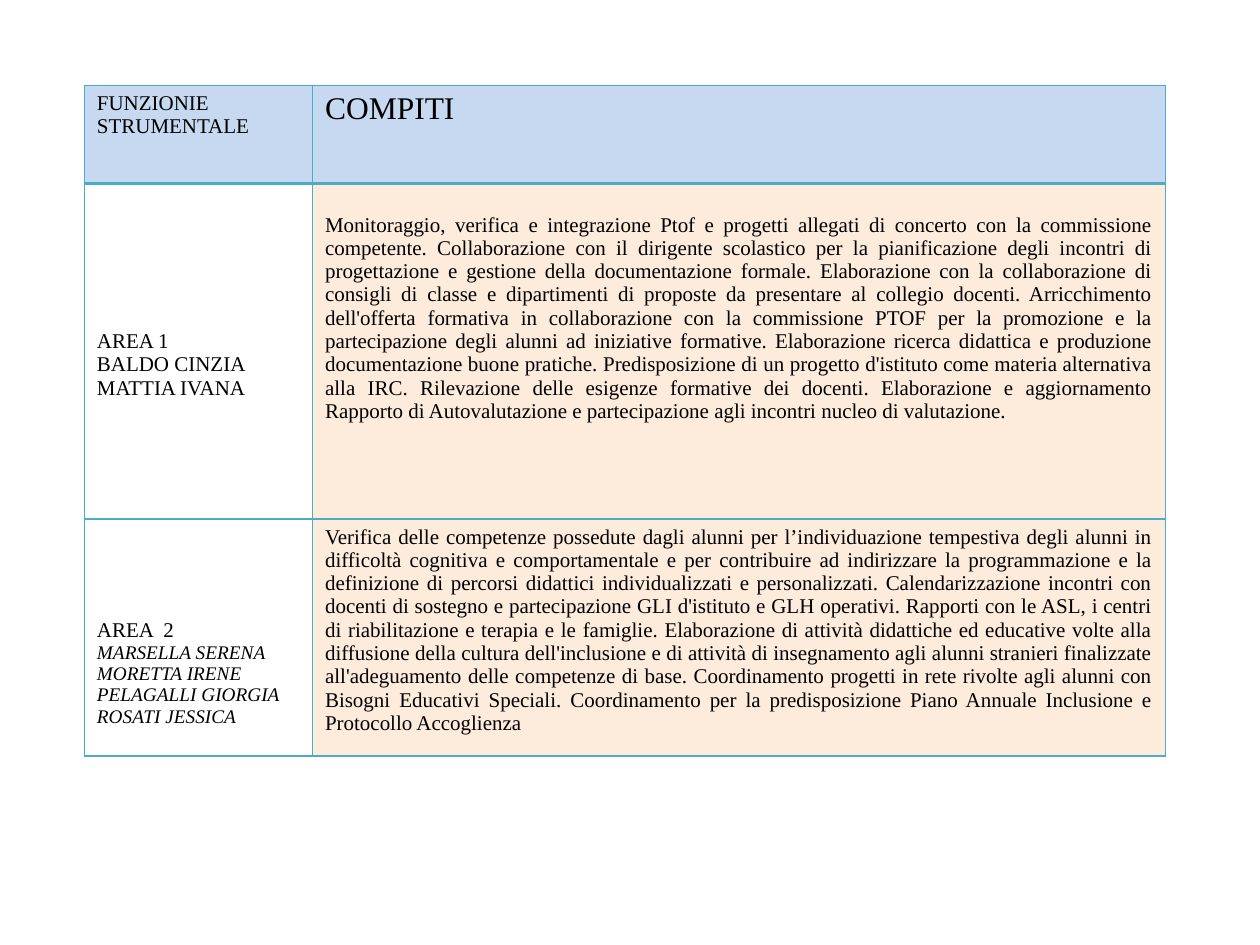
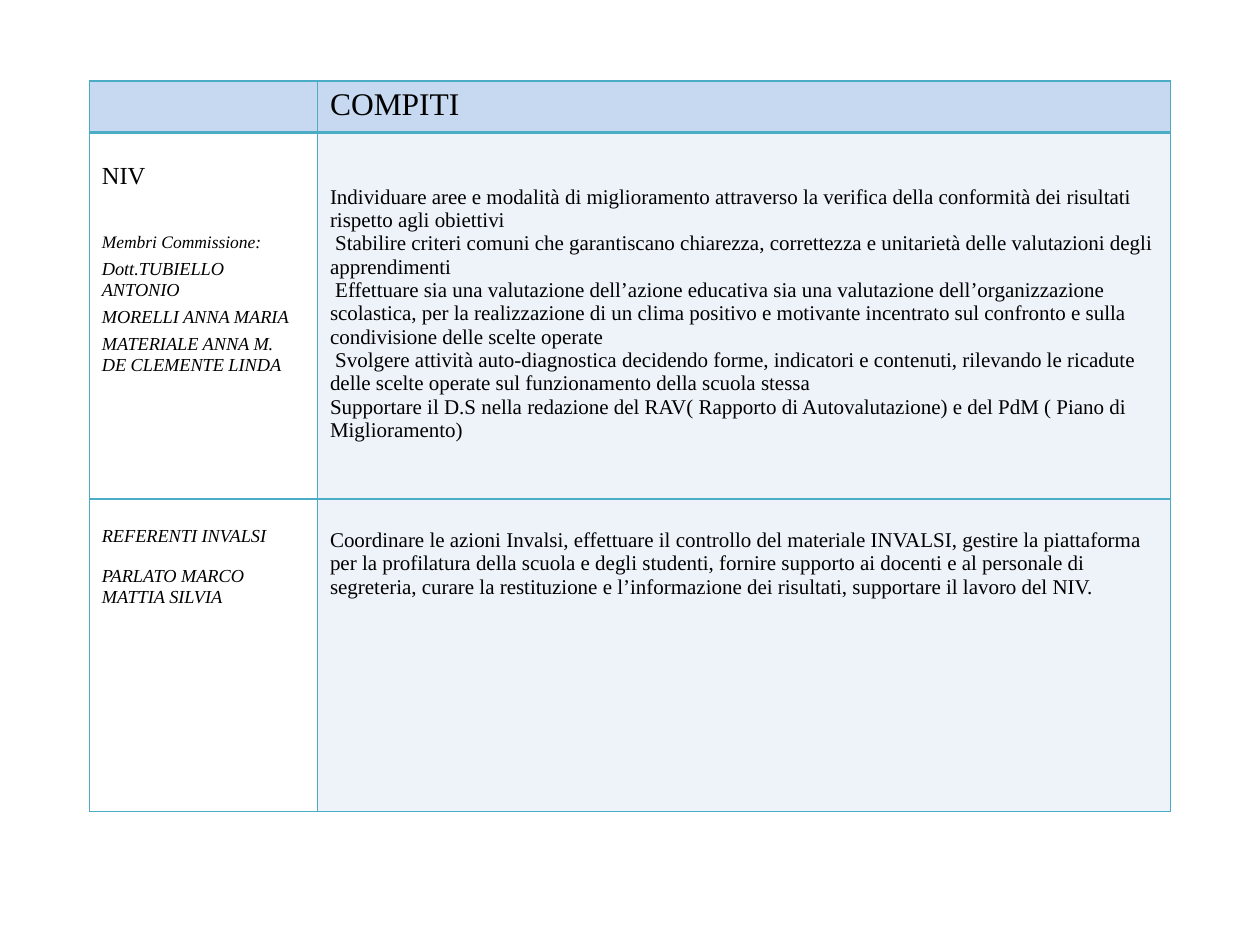
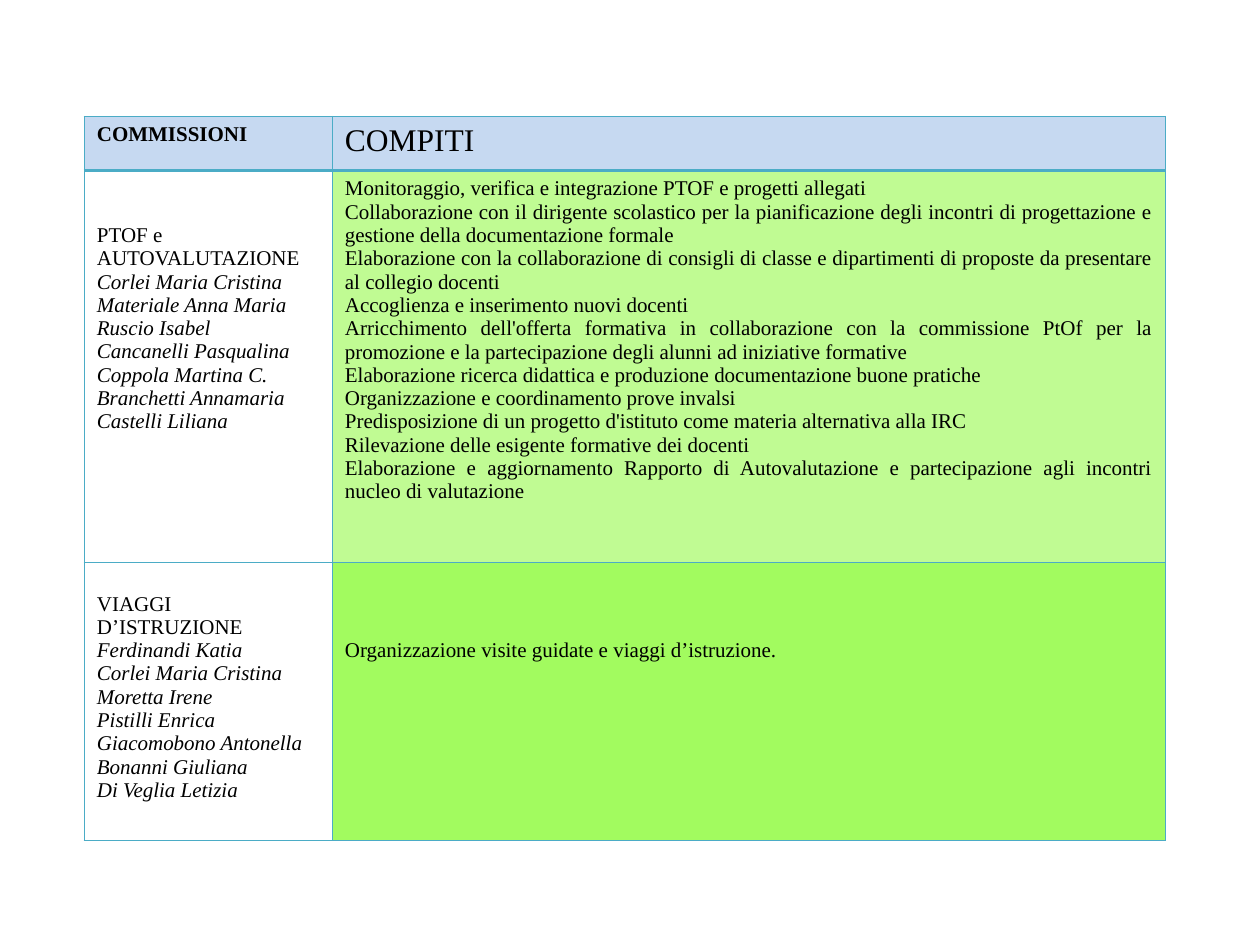
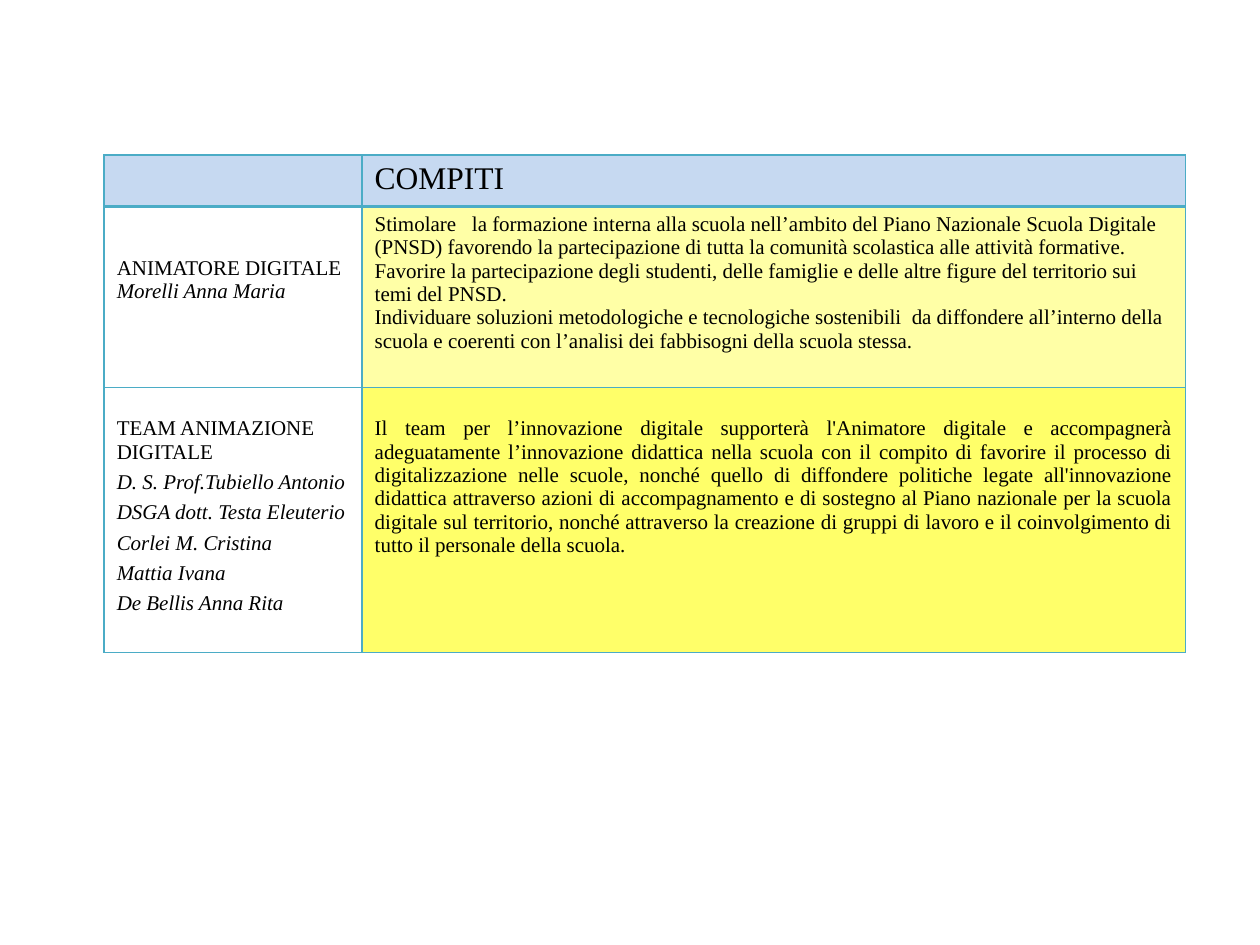
from dataclasses import dataclass

from lxml.etree import SubElement as Sub
from pptx import Presentation
from pptx.dml.color import RGBColor as Rgb
from pptx.enum.text import PP_ALIGN as Align
from pptx.oxml.ns import qn
from pptx.util import Cm, Pt

FONT = "Times New Roman"
INK = "000000"
EDGE = "4BACC6"
HEAD = "C6D9F1"
PEACH = "FAC090"
BLUE = "8EB4E3"
YELLOW = "FFFF00"
PAD = 0.13
LINE = 0.47


@dataclass(frozen=True)
class Para:
    """A paragraph with its type style, sizes in points."""
    text: str
    size: float = 12
    bold: bool = False
    slant: bool = False
    after: float = 0


@dataclass(frozen=True)
class Box:
    """A table cell: paragraphs, lines of lead above them, fill and alignment."""
    paras: tuple[Para, ...] = ()
    lead: float = 0
    fill: str = ""
    alpha: int = 100
    just: bool = False


@dataclass(frozen=True)
class Grid:
    """A two-column table, lengths in centimetres."""
    left: float
    top: float
    cols: tuple[float, float]
    rows: tuple[float, float, float]
    title: tuple[Para, ...]
    cells: tuple[tuple[Box, Box], ...]


def plain(*texts: str) -> tuple[Para, ...]:
    """Return upright paragraphs of the standard size."""
    return tuple(Para(text) for text in texts)


def prose(*parts: str) -> tuple[Para, ...]:
    """Return one upright paragraph made of several sentences."""
    return plain(" ".join(parts))


def names(*texts: str, size: float = 12, after: float = 0) -> tuple[Para, ...]:
    """Return italic paragraphs for a list of people."""
    return tuple(Para(text, size, slant=True, after=after) for text in texts)


def color(code: str) -> Rgb:
    """Turn a hex string into a colour."""
    return Rgb.from_string(code)


def edges(cell, row: int) -> None:
    """Draw the four cell borders, thicker below the header."""
    props = cell._tc.get_or_add_tcPr()
    wide = {("B", 0), ("T", 1)}
    for side in "LRTB":
        width = Pt(2 if (side, row) in wide else 1)
        line = Sub(props, qn(f"a:ln{side}"), w=str(int(width)))
        Sub(Sub(line, qn("a:solidFill")), qn("a:srgbClr"), val=EDGE)


def paint(cell, box: Box) -> None:
    """Fill a cell, with transparency where asked."""
    if not box.fill:
        cell.fill.background()
        return
    cell.fill.solid()
    cell.fill.fore_color.rgb = color(box.fill)
    if box.alpha < 100:
        tone = cell._tc.tcPr.find(qn("a:solidFill")).find(qn("a:srgbClr"))
        Sub(tone, qn("a:alpha"), val=str(box.alpha * 1000))


def write(cell, box: Box) -> None:
    """Set the paragraphs of a cell."""
    cell.margin_top = Cm(PAD + box.lead * LINE)
    frame = cell.text_frame
    for i, para in enumerate(box.paras):
        item = frame.add_paragraph() if i else frame.paragraphs[0]
        item.text = para.text
        item.alignment = Align.JUSTIFY if box.just else Align.LEFT
        item.space_after = Pt(para.after)
        font = item.font
        font.name, font.size = FONT, Pt(para.size)
        font.bold, font.italic = para.bold, para.slant
        font.color.rgb = color(INK)


def draw(deck, grid: Grid) -> None:
    """Add a slide with its table."""
    slide = deck.slides.add_slide(deck.slide_layouts[6])
    table = slide.shapes.add_table(
        len(grid.rows), len(grid.cols), Cm(grid.left), Cm(grid.top),
        Cm(sum(grid.cols)), Cm(sum(grid.rows))).table
    table.first_row = table.horz_banding = False
    for col, width in zip(table.columns, grid.cols):
        col.width = Cm(width)
    for row, height in zip(table.rows, grid.rows):
        row.height = Cm(height)
    head = (Box(grid.title, fill=HEAD), Box((Para("COMPITI", 18),), fill=HEAD))
    for r, pair in enumerate((head, *grid.cells)):
        for c, box in enumerate(pair):
            cell = table.cell(r, c)
            edges(cell, r)
            paint(cell, box)
            write(cell, box)


AREAS = Grid(
    1.7, 1.72, (4.6, 17.2), (1.98, 6.76, 4.78),
    plain("FUNZIONIE STRUMENTALE"),
    ((Box(plain("AREA 1", "BALDO CINZIA", "MATTIA IVANA"), 6),
      Box(prose(
          "Monitoraggio, verifica e integrazione Ptof e progetti allegati di "
          "concerto con la commissione competente.",
          "Collaborazione con il dirigente scolastico per la pianificazione "
          "degli incontri di progettazione e gestione della documentazione "
          "formale.",
          "Elaborazione con la collaborazione di consigli di classe e "
          "dipartimenti di proposte da presentare al collegio docenti.",
          "Arricchimento dell'offerta formativa in collaborazione con la "
          "commissione PTOF per la promozione e la partecipazione degli "
          "alunni ad iniziative formative.",
          "Elaborazione ricerca didattica e produzione documentazione buone "
          "pratiche.",
          "Predisposizione di un progetto d'istituto come materia "
          "alternativa alla IRC.",
          "Rilevazione delle esigenze formative dei docenti.",
          "Elaborazione e aggiornamento Rapporto di Autovalutazione e "
          "partecipazione agli incontri nucleo di valutazione."),
          1, PEACH, 31, True)),
     (Box(plain("AREA  2") + names(
         "MARSELLA SERENA", "MORETTA IRENE", "PELAGALLI GIORGIA",
         "ROSATI JESSICA", size=11), 4),
      Box(prose(
          "Verifica delle competenze possedute dagli alunni per "
          "l’individuazione tempestiva degli alunni in difficoltà cognitiva "
          "e comportamentale e per contribuire ad indirizzare la "
          "programmazione e la definizione di percorsi didattici "
          "individualizzati e personalizzati.",
          "Calendarizzazione incontri con docenti di sostegno e "
          "partecipazione GLI d'istituto e GLH operativi.",
          "Rapporti con le ASL, i centri di riabilitazione e terapia e le "
          "famiglie.",
          "Elaborazione di attività didattiche ed educative volte alla "
          "diffusione della cultura dell'inclusione e di attività di "
          "insegnamento agli alunni stranieri finalizzate all'adeguamento "
          "delle competenze di base.",
          "Coordinamento progetti in rete rivolte agli alunni con Bisogni "
          "Educativi Speciali.",
          "Coordinamento per la predisposizione Piano Annuale Inclusione e "
          "Protocollo Accoglienza"), 0, PEACH, 31, True))))

NIV = Grid(
    1.8, 1.63, (4.6, 17.2), (1.04, 7.39, 6.3), (),
    ((Box((Para("NIV", 14, after=25),)
          + names("Membri Commissione:", size=10, after=4)
          + names("Dott.TUBIELLO ANTONIO", "MORELLI ANNA MARIA",
                  size=10.5, after=4)
          + names("MATERIALE ANNA M.", "DE CLEMENTE LINDA", size=10.5),
          1, "FFFFFF"),
      Box(plain(
          "Individuare aree e modalità di miglioramento attraverso la "
          "verifica della conformità dei risultati rispetto agli obiettivi",
          " Stabilire criteri comuni che garantiscano chiarezza, correttezza "
          "e unitarietà delle valutazioni degli apprendimenti",
          " Effettuare sia una valutazione dell’azione educativa sia una "
          "valutazione dell’organizzazione scolastica, per la realizzazione "
          "di un clima positivo e motivante incentrato sul confronto e sulla "
          "condivisione delle scelte operate",
          " Svolgere attività auto-diagnostica decidendo forme, indicatori e "
          "contenuti, rilevando le ricadute delle scelte operate sul "
          "funzionamento della scuola stessa",
          "Supportare il D.S nella redazione del RAV( Rapporto di "
          "Autovalutazione) e del PdM ( Piano di",
          "Miglioramento)"), 2, BLUE, 15)),
     (Box(names("REFERENTI INVALSI", size=10.5, after=11.6)
          + names("PARLATO MARCO", "MATTIA SILVIA", size=10.5),
          0.87, "FFFFFF"),
      Box(plain(
          "Coordinare le azioni Invalsi, effettuare il controllo del "
          "materiale INVALSI, gestire la piattaforma per la profilatura "
          "della scuola e degli studenti, fornire supporto ai docenti e al "
          "personale di segreteria, curare la restituzione e l’informazione "
          "dei risultati, supportare il lavoro del NIV."), 1, BLUE, 15))))

PANELS = Grid(
    1.7, 2.35, (5, 16.8), (1.09, 7.9, 5.6),
    (Para("COMMISSIONI", bold=True),),
    ((Box(plain("PTOF e AUTOVALUTAZIONE") + names(
        "Corlei Maria Cristina", "Materiale Anna Maria", "Ruscio Isabel",
        "Cancanelli Pasqualina", "Coppola Martina C.",
        "Branchetti Annamaria", "Castelli Liliana"), 2),
      Box(plain(
          "Monitoraggio, verifica e integrazione PTOF e progetti allegati",
          "Collaborazione con il dirigente scolastico per la pianificazione "
          "degli incontri di progettazione e gestione della documentazione "
          "formale",
          "Elaborazione con la collaborazione di consigli di classe e "
          "dipartimenti di proposte da presentare al collegio docenti",
          "Accoglienza e inserimento nuovi docenti",
          "Arricchimento dell'offerta formativa in collaborazione con la "
          "commissione PtOf per la promozione e la partecipazione degli "
          "alunni ad iniziative formative",
          "Elaborazione ricerca didattica e produzione documentazione buone "
          "pratiche",
          "Organizzazione e coordinamento prove invalsi",
          "Predisposizione di un progetto d'istituto come materia "
          "alternativa alla IRC",
          "Rilevazione delle esigente formative dei docenti",
          "Elaborazione e aggiornamento Rapporto di Autovalutazione e "
          "partecipazione agli incontri nucleo di valutazione"),
          0, "6EF806", 43, True)),
     (Box(plain("VIAGGI D’ISTRUZIONE") + names(
         "Ferdinandi Katia", "Corlei Maria Cristina", "Moretta Irene",
         "Pistilli Enrica", "Giacomobono Antonella", "Bonanni Giuliana",
         "Di Veglia Letizia"), 1),
      Box(plain("Organizzazione visite guidate e viaggi d’istruzione."),
          3, "8BFA38", 80))))

DIGITAL = Grid(
    2.1, 3.12, (5.2, 16.6), (1.04, 3.65, 5.34), (),
    ((Box(plain("ANIMATORE DIGITALE") + names("Morelli Anna Maria"), 1.87),
      Box(plain(
          "Stimolare   la formazione interna alla scuola nell’ambito del "
          "Piano Nazionale Scuola Digitale (PNSD) favorendo la "
          "partecipazione di tutta la comunità scolastica alle attività "
          "formative.",
          "Favorire la partecipazione degli studenti, delle famiglie e delle "
          "altre figure del territorio sui temi del PNSD.",
          "Individuare soluzioni metodologiche e tecnologiche sostenibili  "
          "da diffondere all’interno della scuola e coerenti con l’analisi "
          "dei fabbisogni della scuola stessa."), 0, YELLOW, 35)),
     (Box((Para("TEAM ANIMAZIONE DIGITALE", after=4),) + names(
         "D. S. Prof.Tubiello Antonio", "DSGA dott. Testa Eleuterio",
         "Corlei M. Cristina", "Mattia Ivana", "De Bellis Anna Rita",
         after=4), 1),
      Box(plain(
          "Il team per l’innovazione digitale supporterà l'Animatore "
          "digitale e accompagnerà adeguatamente l’innovazione didattica "
          "nella scuola con il compito di favorire il processo di "
          "digitalizzazione nelle scuole, nonché quello di diffondere "
          "politiche legate all'innovazione didattica attraverso azioni di "
          "accompagnamento e di sostegno al Piano nazionale per la scuola "
          "digitale sul territorio, nonché attraverso la creazione di gruppi "
          "di lavoro e il coinvolgimento di tutto il personale della "
          "scuola."), 1, YELLOW, 59, True))))


def main() -> None:
    """Build and save the deck."""
    deck = Presentation()
    deck.slide_width, deck.slide_height = Cm(25.4), Cm(19.05)
    for grid in (AREAS, NIV, PANELS, DIGITAL):
        draw(deck, grid)
    deck.save("out.pptx")


if __name__ == "__main__":
    main()
